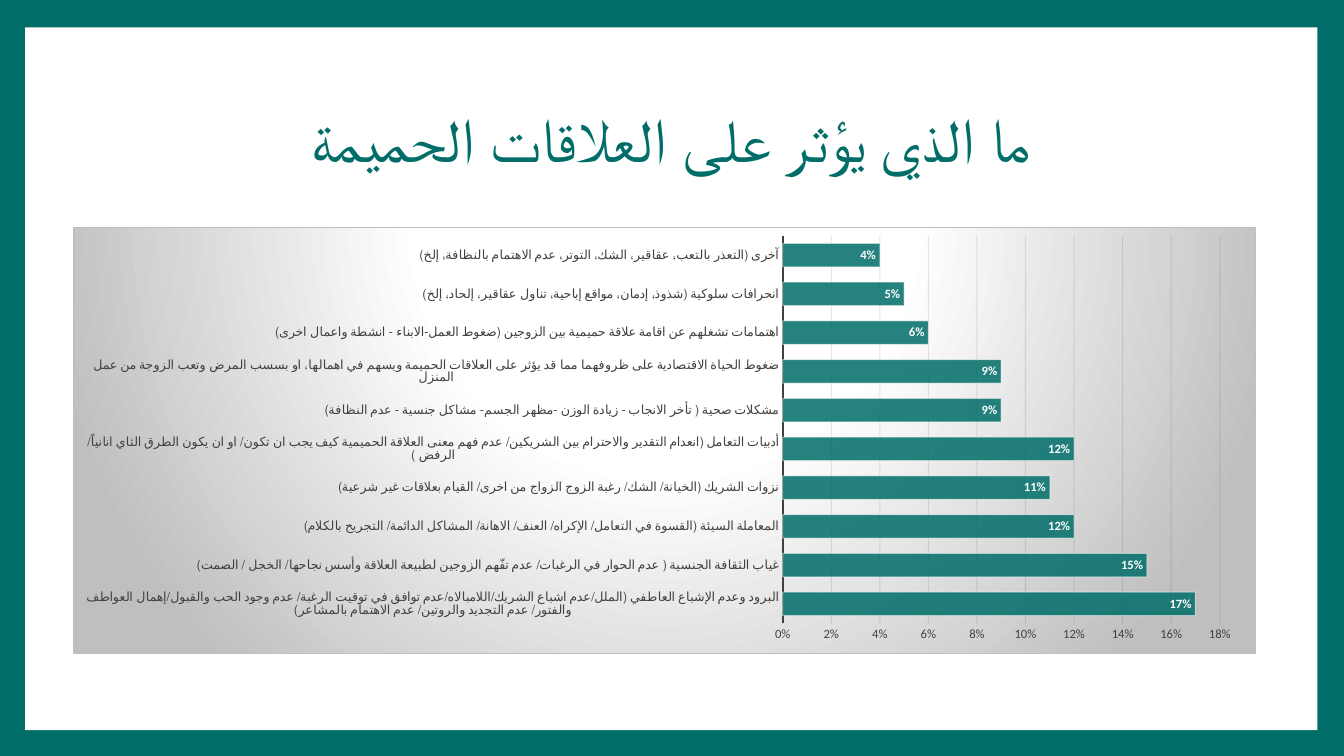
"""Build a slide with a bar chart of what affects intimate relations."""
import lxml.etree
import pptx
import pptx.chart.data
import pptx.dml.color
import pptx.enum.chart
import pptx.enum.shapes
import pptx.enum.text
import pptx.oxml
import pptx.oxml.ns
import pptx.util

Pt = pptx.util.Pt
TEAL, WHITE, DARK_GRAY, LIGHT_GRAY = "006D68", "FFFFFF", "404040", "BFBFBF"
REASONS = [
    ("البرود وعدم الإشباع العاطفي (الملل/عدم اشباع الشريك/اللامبالاه/عدم توافق في توقيت الرغبة/ عدم وجود الحب والقبول/إهمال العواطف والفتور/ عدم التجديد والروتين/ عدم الاهتمام بالمشاعر)", 0.17),
    ("غياب الثقافة الجنسية ( عدم الحوار في الرغبات/ عدم تفّهم الزوجين لطبيعة العلاقة وأسس نجاحها/ الخجل / الصمت)", 0.15),
    ("المعاملة السيئة (القسوة في التعامل/ الإكراه/ العنف/ الاهانة/ المشاكل الدائمة/ التجريح بالكلام)", 0.12),
    ("نزوات الشريك (الخيانة/ الشك/ رغبة الزوج الزواج من اخرى/ القيام بعلاقات غير شرعية)", 0.11),
    ("أدبيات التعامل (انعدام التقدير والاحترام بين الشريكين/ عدم فهم معنى العلاقة الحميمية كيف يجب ان تكون/ او ان يكون الطرق الثاي انانياً/ الرفض )", 0.12),
    ("مشكلات صحية ( تأخر الانجاب - زيادة الوزن -مظهر الجسم- مشاكل جنسية - عدم النظافة)", 0.09),
    ("ضغوط الحياة الاقتصادية على ظروفهما مما قد يؤثر على العلاقات الحميمة ويسهم في اهمالها، او بسسب المرض وتعب الزوجة من عمل المنزل", 0.09),
    ("اهتمامات تشغلهم عن اقامة علاقة حميمية بين الزوجين (ضغوط العمل-الابناء - انشطة واعمال اخرى)", 0.06),
    ("انحرافات سلوكية (شذوذ، إدمان، مواقع إباحية، تناول عقاقير، إلحاد، إلخ)", 0.05),
    ("آخرى (التعذر بالتعب، عقاقير، الشك، التوتر، عدم الاهتمام بالنظافة، إلخ)", 0.04),
]


def color(code):
    return pptx.dml.color.RGBColor.from_string(code)


def set_opacity(element, *percents):
    for node, percent in zip(element.xpath(".//c:spPr//a:srgbClr"), percents):
        alpha = lxml.etree.SubElement(node, pptx.oxml.ns.qn("a:alpha"))
        alpha.set("val", str(percent * 1000))


presentation = pptx.Presentation()
presentation.slide_width, presentation.slide_height = Pt(960), Pt(540)
slide = presentation.slides.add_slide(presentation.slide_layouts[6])
slide.background.fill.solid()
slide.background.fill.fore_color.rgb = color(TEAL)

panel = slide.shapes.add_shape(
    pptx.enum.shapes.MSO_SHAPE.RECTANGLE, Pt(18), Pt(19.5), Pt(923), Pt(502))
panel.shadow.inherit = False
panel.fill.solid()
panel.fill.fore_color.rgb = color(WHITE)
panel.line.fill.background()

title = slide.shapes.add_textbox(Pt(90), Pt(48), Pt(778), Pt(107))
title.text_frame.word_wrap = True
title.text_frame.vertical_anchor = pptx.enum.text.MSO_ANCHOR.MIDDLE
paragraph = title.text_frame.paragraphs[0]
paragraph.text = "ما الذي يؤثر على العلاقات الحميمة"
paragraph.alignment = pptx.enum.text.PP_ALIGN.CENTER
paragraph.line_spacing = 0.9
paragraph.font.size = Pt(44)
paragraph.font.name = "Arial"
paragraph.font.color.rgb = color(TEAL)
paragraph._p.get_or_add_pPr().set("rtl", "1")

chart_data = pptx.chart.data.CategoryChartData(number_format="0%")
chart_data.categories = [reason for reason, share in REASONS]
chart_data.add_series("Series 1", [share for reason, share in REASONS])
chart = slide.shapes.add_chart(
    pptx.enum.chart.XL_CHART_TYPE.BAR_CLUSTERED,
    Pt(52.5), Pt(162), Pt(844.5), Pt(305), chart_data).chart
chart.has_legend = False
chart.has_title = False
chart.font.size = Pt(10)
chart.font.name = "Calibri"
chart.font.color.rgb = color("000000")

for axis in (chart.category_axis, chart.value_axis):
    axis.major_tick_mark = pptx.enum.chart.XL_TICK_MARK.NONE
    axis.minor_tick_mark = pptx.enum.chart.XL_TICK_MARK.NONE
    axis.tick_labels.font.size = Pt(9)
    axis.tick_labels.font.name = "Calibri"
    axis.tick_labels.font.color.rgb = color(DARK_GRAY)
chart.category_axis.format.line.color.rgb = color(DARK_GRAY)
chart.category_axis.format.line.width = Pt(1.5)

value_axis = chart.value_axis
value_axis.minimum_scale, value_axis.maximum_scale = 0, 0.18
value_axis.major_unit = 0.02
value_axis.format.line.fill.background()
value_axis.tick_labels.number_format = "0%"
value_axis.tick_labels.number_format_is_linked = False
gridlines = value_axis.major_gridlines
gridlines.format.line.color.rgb = color("0D0D0D")
gridlines.format.line.width = Pt(0.75)
set_opacity(value_axis._element, 10)

plot = chart.plots[0]
plot.gap_width = 65
plot.vary_by_categories = False
series = plot.series[0]
series.format.fill.solid()
series.format.fill.fore_color.rgb = color(TEAL)
series.format.line.color.rgb = color(WHITE)
series.format.line.width = Pt(0.75)
set_opacity(series._element, 85, 50)

labels = series.data_labels
labels.show_value = True
labels.position = pptx.enum.chart.XL_LABEL_POSITION.INSIDE_END
labels.number_format = "0%"
labels.number_format_is_linked = False
labels.font.size = Pt(9)
labels.font.bold = True
labels.font.name = "Calibri"
labels.font.color.rgb = color(WHITE)

namespaces = pptx.oxml.ns.nsdecls("c", "a")
plot_area = chart._chartSpace.chart.plotArea
for layout in plot_area.findall(pptx.oxml.ns.qn("c:layout")):
    plot_area.remove(layout)
plot_area.insert(0, pptx.oxml.parse_xml(
    f'<c:layout {namespaces}><c:manualLayout><c:layoutTarget val="inner"/>'
    '<c:xMode val="edge"/><c:yMode val="edge"/><c:x val="0.6"/><c:y val="0.02"/>'
    '<c:w val="0.37"/><c:h val="0.91"/></c:manualLayout></c:layout>'))

stops = "".join(
    f'<a:gs pos="{position * 1000}"><a:srgbClr val="{code}"/></a:gs>'
    for position, code in ((0, WHITE), (39, WHITE), (100, LIGHT_GRAY)))
chart._chartSpace.chart.addnext(pptx.oxml.parse_xml(
    f'<c:spPr {namespaces}><a:gradFill><a:gsLst>{stops}</a:gsLst><a:path path="circle">'
    '<a:fillToRect l="50000" t="-80000" r="50000" b="180000"/></a:path></a:gradFill>'
    f'<a:ln w="{Pt(0.75)}"><a:solidFill><a:srgbClr val="{LIGHT_GRAY}"/></a:solidFill></a:ln></c:spPr>'))

presentation.save("out.pptx")
